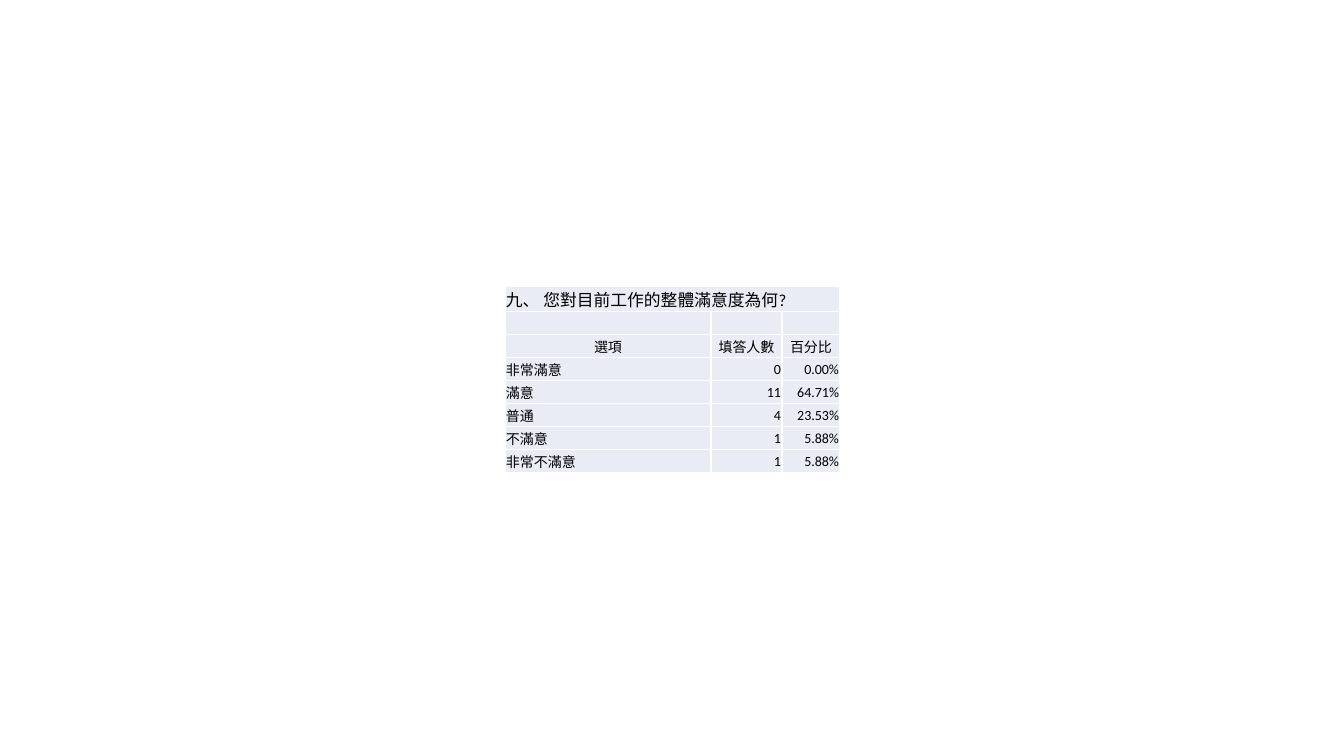
from lxml import etree
from pptx import Presentation
from pptx.dml.color import RGBColor
from pptx.enum.text import MSO_ANCHOR, PP_ALIGN
from pptx.oxml.ns import qn
from pptx.util import Pt

LEFT, CENTER, RIGHT = PP_ALIGN.LEFT, PP_ALIGN.CENTER, PP_ALIGN.RIGHT
MIDDLE = MSO_ANCHOR.MIDDLE

QUESTION = "九、 您對目前工作的整體滿意度為何?"
HEADINGS = ("選項", "填答人數", "百分比")
ANSWERS = [
    ("非常滿意", "0", "0.00%"),
    ("滿意", "11", "64.71%"),
    ("普通", "4", "23.53%"),
    ("不滿意", "1", "5.88%"),
    ("非常不滿意", "1", "5.88%"),
]
ROWS = [(QUESTION, "", ""), ("", "", ""), HEADINGS, *ANSWERS]
HEADING_ROW = ROWS.index(HEADINGS)

SLIDE_WIDTH, SLIDE_HEIGHT = 1344, 756
TABLE_LEFT, TABLE_TOP = 505, 286
COLUMN_WIDTHS = (206, 71, 58)
ROW_HEIGHT = 23
FONT_NAME = "Calibri"
BLACK = RGBColor(0x00, 0x00, 0x00)
WHITE = RGBColor(0xFF, 0xFF, 0xFF)
PALE_BLUE = RGBColor(0xE9, 0xEB, 0xF5)
EMU_PER_PX = 914400 / 100.8


def px(length):
    return round(length * EMU_PER_PX)


def add_borders(cell):
    properties = cell._tc.get_or_add_tcPr()
    for position, side in enumerate(("lnL", "lnR", "lnT", "lnB")):
        line = etree.Element(qn(f"a:{side}"), w=str(Pt(1)))
        fill = etree.SubElement(line, qn("a:solidFill"))
        etree.SubElement(fill, qn("a:srgbClr"), val=str(WHITE))
        properties.insert(position, line)


def alignment_for(row, column):
    if row == HEADING_ROW:
        return CENTER
    return RIGHT if row > HEADING_ROW and column > 0 else LEFT


def fill_cell(cell, text, size, alignment):
    cell.fill.solid()
    cell.fill.fore_color.rgb = PALE_BLUE
    add_borders(cell)
    cell.margin_left = cell.margin_right = cell.margin_top = px(1)
    cell.margin_bottom = 0
    cell.vertical_anchor = MIDDLE
    cell.text = text
    paragraph = cell.text_frame.paragraphs[0]
    paragraph.alignment = alignment
    paragraph.font.name = FONT_NAME
    paragraph.font.size = Pt(size)
    paragraph.font.bold = False
    paragraph.font.color.rgb = BLACK


def add_survey_table(slide):
    frame = slide.shapes.add_table(
        len(ROWS), len(COLUMN_WIDTHS), px(TABLE_LEFT), px(TABLE_TOP),
        px(sum(COLUMN_WIDTHS)), px(ROW_HEIGHT * len(ROWS)))
    table = frame.table
    table.first_row = table.horz_banding = False
    for column, width in zip(table.columns, COLUMN_WIDTHS):
        column.width = px(width)
    for row_index, texts in enumerate(ROWS):
        table.rows[row_index].height = px(ROW_HEIGHT)
        size = 12 if row_index == 0 else 10
        for column_index, text in enumerate(texts):
            fill_cell(table.cell(row_index, column_index), text, size,
                      alignment_for(row_index, column_index))
    table.cell(0, 0).merge(table.cell(0, len(COLUMN_WIDTHS) - 1))


def main():
    presentation = Presentation()
    presentation.slide_width = px(SLIDE_WIDTH)
    presentation.slide_height = px(SLIDE_HEIGHT)
    slide = presentation.slides.add_slide(presentation.slide_layouts[6])
    add_survey_table(slide)
    presentation.save("out.pptx")


if __name__ == "__main__":
    main()
